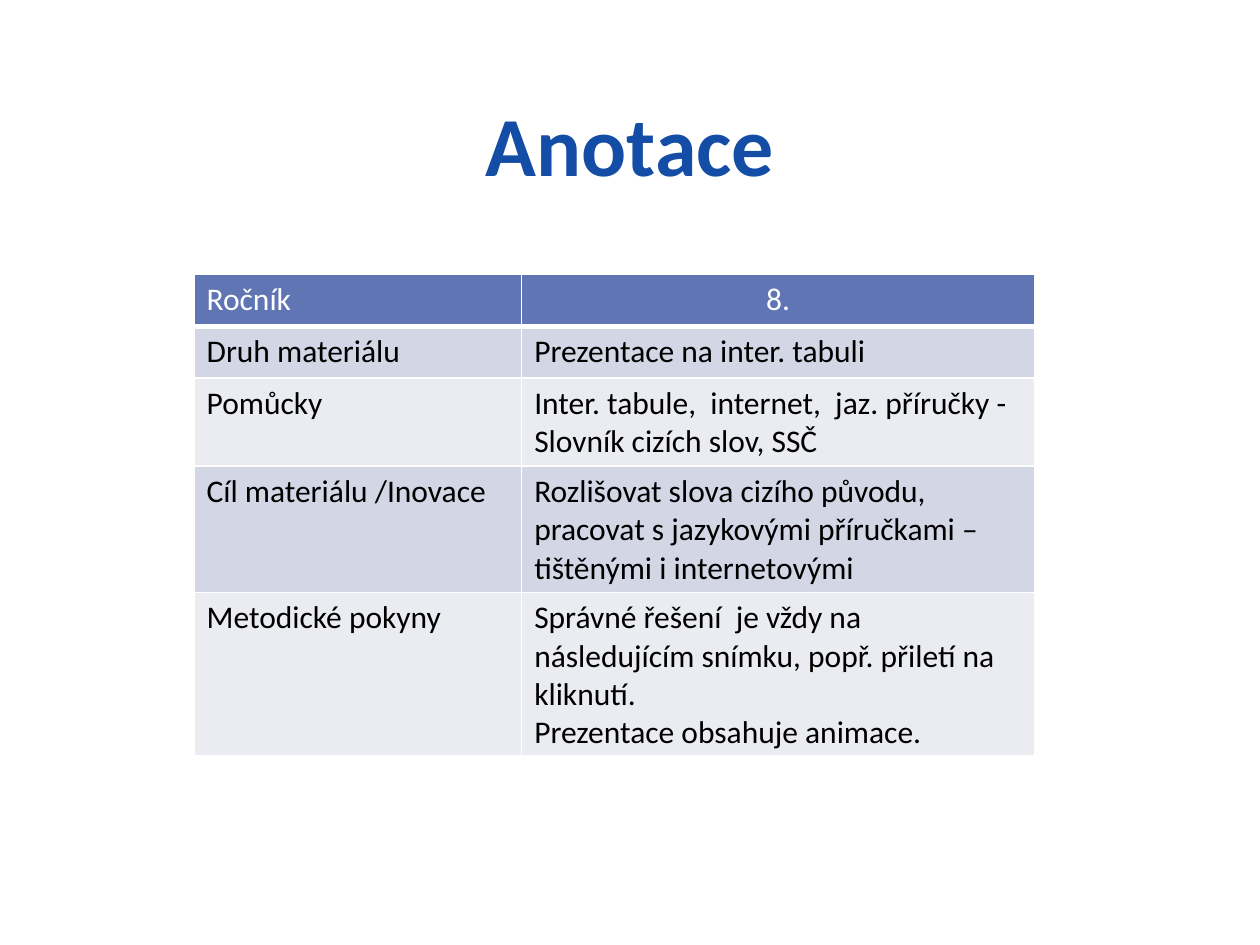
import pptx
import pptx.util
import pptx.dml.color
import pptx.enum.text
import pptx.oxml
import pptx.oxml.ns

inch = pptx.util.Inches
align = pptx.enum.text.PP_ALIGN
theme = {
    "font": "Calibri", "title": "144DA5", "head": "6076B4",
    "bands": ["D2D6E5", "EAECF2"], "light": "FFFFFF", "dark": "000000",
    "big": 48, "body": 18, "thin": 1, "thick": 3,
}


def write(par, text, size, tint, bold=False):
    run = par.add_run()
    run.text = text
    run.font.name = theme["font"]
    run.font.size = pptx.util.Pt(size)
    run.font.bold = bold
    run.font.color.rgb = pptx.dml.color.RGBColor.from_string(tint)


def border(cell, low):
    props = cell._tc.get_or_add_tcPr()
    for spot, side in enumerate("LRTB"):
        width = pptx.util.Pt(low if side == "B" else theme["thin"])
        line = pptx.oxml.parse_xml(
            f'<a:ln{side} {pptx.oxml.ns.nsdecls("a")} w="{width}"><a:solidFill>'
            f'<a:srgbClr val="{theme["light"]}"/></a:solidFill></a:ln{side}>')
        props.insert(spot, line)


deck = pptx.Presentation()
deck.slide_width, deck.slide_height = inch(10), inch(7.5)
slide = deck.slides.add_slide(deck.slide_layouts[6])

# Title
box = slide.shapes.add_textbox(inch(0.5), inch(0.33), inch(9), inch(1.25))
frame = box.text_frame
frame.word_wrap = True
frame.vertical_anchor = pptx.enum.text.MSO_ANCHOR.BOTTOM
frame.paragraphs[0].alignment = align.CENTER
write(frame.paragraphs[0], "Anotace", theme["big"], theme["title"], True)

# Table: each row holds a label and its paragraphs
rows = [
    ("Ročník", ["8."]),
    ("Druh materiálu", ["Prezentace na inter. tabuli"]),
    ("Pomůcky", ["Inter. tabule,  internet,  jaz. příručky - Slovník cizích slov, SSČ"]),
    ("Cíl materiálu /Inovace",
     ["Rozlišovat slova cizího původu, pracovat s jazykovými příručkami – "
      "tištěnými i internetovými"]),
    ("Metodické pokyny",
     ["Správné řešení  je vždy na následujícím snímku, popř. přiletí na kliknutí.",
      "Prezentace obsahuje animace."]),
]
cols = [2.6, 4.07]
high = 0.41  # least height; rows grow with their text
grid = slide.shapes.add_table(len(rows), len(cols), inch(1.54), inch(2.18),
                              inch(sum(cols)), inch(high * len(rows))).table
for col, wide in zip(grid.columns, cols):
    col.width = inch(wide)

for r, (label, notes) in enumerate(rows):
    grid.rows[r].height = inch(high)
    head = r == 0
    fill = theme["head"] if head else theme["bands"][(r - 1) % 2]
    tint = theme["light"] if head else theme["dark"]
    for c, texts in enumerate([[label], notes]):
        cell = grid.cell(r, c)
        cell.fill.solid()
        cell.fill.fore_color.rgb = pptx.dml.color.RGBColor.from_string(fill)
        border(cell, theme["thick"] if head else theme["thin"])
        for n, text in enumerate(texts):
            body = cell.text_frame
            par = body.add_paragraph() if n else body.paragraphs[0]
            par.alignment = align.CENTER if head and c else align.LEFT
            write(par, text, theme["body"], tint)

deck.save("out.pptx")
